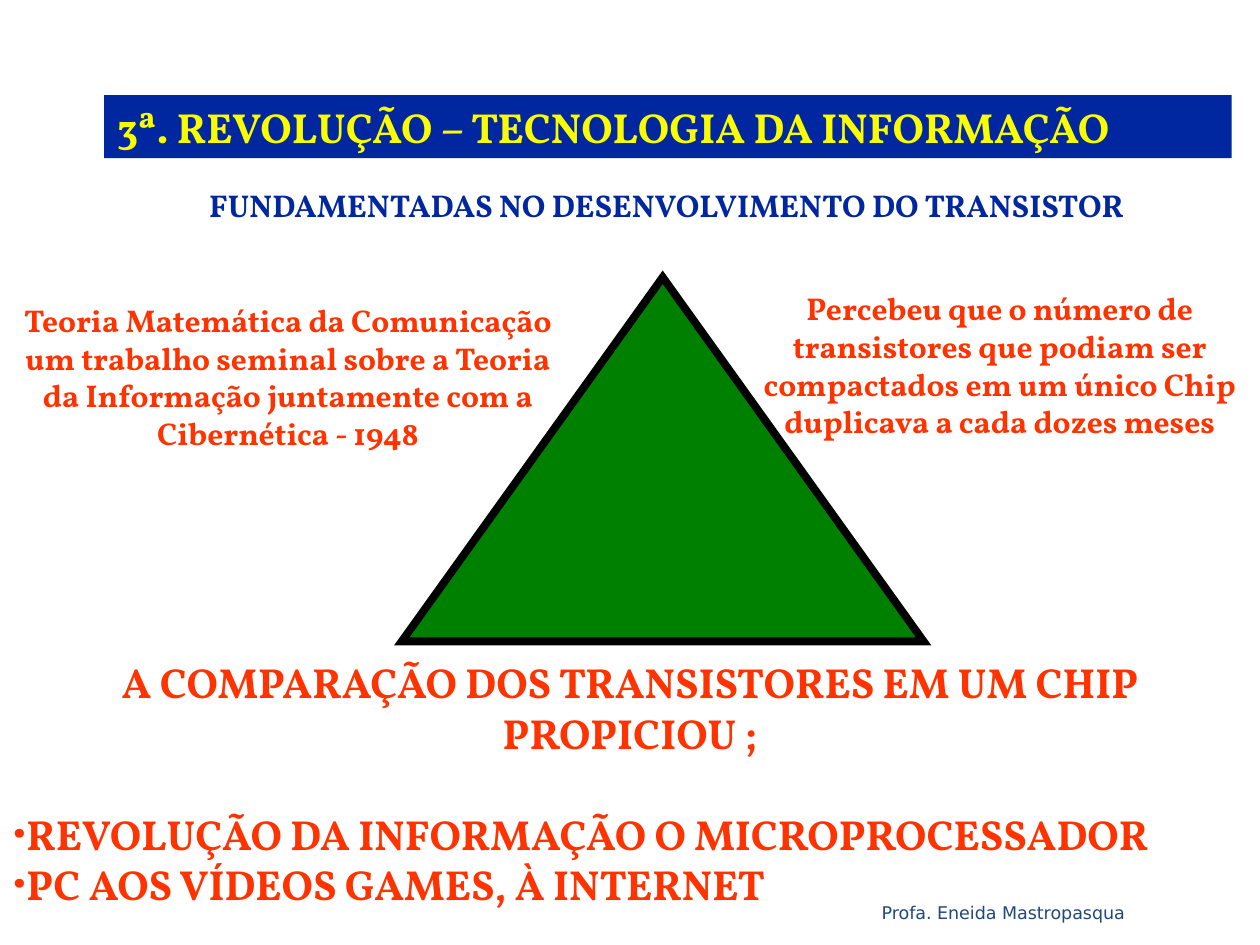
from dataclasses import dataclass

from lxml.etree import SubElement
from pptx import Presentation
from pptx.dml.color import RGBColor
from pptx.enum.shapes import MSO_SHAPE
from pptx.enum.text import MSO_ANCHOR, MSO_AUTO_SIZE, PP_ALIGN
from pptx.oxml.ns import qn
from pptx.util import Cm, Pt

COLORS = {
    "blue": "00279F",
    "yellow": "FAFD00",
    "red": "FF3300",
    "green": "008000",
    "black": "000000",
    "navy": "1F497D",
}


@dataclass
class Box:
    """Position and size in centimetres."""
    left: float
    top: float
    width: float
    height: float

    def emu(self) -> tuple:
        return Cm(self.left), Cm(self.top), Cm(self.width), Cm(self.height)


@dataclass
class Para:
    text: str
    bullet: bool = False
    before: float = 0


@dataclass
class TextBlock:
    box: Box
    paras: list
    size: int = 18
    color: str = "red"
    font: str = "Vollkorn"
    bold: bool = True
    wrap: bool = True
    spacing: float = 1.0


BLOCKS = [
    # Subtitle
    TextBlock(Box(2.9, 3.63, 21.08, 1.02),
              [Para("FUNDAMENTADAS NO DESENVOLVIMENTO DO TRANSISTOR")],
              color="blue", wrap=False),
    # Left and right of the triangle
    TextBlock(Box(0, 5.94, 11.61, 3.3),
              [Para("Teoria Matemática da Comunicação um trabalho seminal sobre a "
                    "Teoria da Informação juntamente com a Cibernética - 1948")]),
    TextBlock(Box(14.91, 5.7, 10.49, 3.3),
              [Para("Percebeu que o número de transistores que podiam ser "
                    "compactados em um único Chip duplicava a cada dozes meses")]),
    # Conclusion with bullets
    TextBlock(Box(0, 13.13, 25.4, 5.31),
              [Para("A COMPARAÇÃO DOS TRANSISTORES EM UM CHIP PROPICIOU ;"),
               Para("REVOLUÇÃO DA INFORMAÇÃO O MICROPROCESSADOR", True, 29),
               Para("PC AOS VÍDEOS GAMES, À INTERNET", True)],
              size=24),
    # Author
    TextBlock(Box(15.73, 18.12, 8.99, 0.61), [Para("Profa. Eneida Mastropasqua")],
              size=10, color="navy", font="DejaVu Sans", bold=False, spacing=0.85),
]


def rgb(name: str) -> RGBColor:
    return RGBColor.from_string(COLORS[name])


def add_run(p, text: str, *, size: int, color: str,
            font: str = "Vollkorn", bold: bool = True) -> None:
    r = p.add_run()
    r.text = text
    r.font.size = Pt(size)
    r.font.name = font
    r.font.bold = bold
    r.font.color.rgb = rgb(color)


def add_bullet(p, font: str) -> None:
    pPr = p._p.get_or_add_pPr()
    pPr.set("marL", "0")
    pPr.set("indent", "0")
    SubElement(pPr, qn("a:buFont")).set("typeface", font)
    SubElement(pPr, qn("a:buChar")).set("char", "•")


def add_block(s, block: TextBlock) -> None:
    tf = s.shapes.add_textbox(*block.box.emu()).text_frame
    tf.word_wrap = block.wrap
    tf.vertical_anchor = MSO_ANCHOR.MIDDLE
    for i, para in enumerate(block.paras):
        p = tf.add_paragraph() if i else tf.paragraphs[0]
        p.alignment = PP_ALIGN.LEFT if para.bullet else PP_ALIGN.CENTER
        p.line_spacing = block.spacing
        p.space_before = Pt(para.before)
        if para.bullet:
            add_bullet(p, block.font)
        add_run(p, para.text, size=block.size, color=block.color,
                font=block.font, bold=block.bold)


def add_title(s, box: Box, text: str) -> None:
    sp = s.shapes.title
    sp.left, sp.top, sp.width, sp.height = box.emu()
    sp.fill.solid()
    sp.fill.fore_color.rgb = rgb("blue")
    tf = sp.text_frame
    tf.word_wrap = False
    tf.auto_size = MSO_AUTO_SIZE.NONE
    tf.vertical_anchor = MSO_ANCHOR.TOP
    p = tf.paragraphs[0]
    p.alignment = PP_ALIGN.LEFT
    add_run(p, text, size=24, color="yellow")


def add_triangle(s, box: Box) -> None:
    sp = s.shapes.add_shape(MSO_SHAPE.ISOSCELES_TRIANGLE, *box.emu())
    sp.shadow.inherit = False
    sp.fill.solid()
    sp.fill.fore_color.rgb = rgb("green")
    sp.line.color.rgb = rgb("black")
    sp.line.width = Pt(4.5)
    # Sharp corners
    ln = sp._element.spPr.find(qn("a:ln"))
    SubElement(ln, qn("a:miter")).set("lim", "800000")


def main() -> None:
    prs = Presentation()
    prs.slide_width, prs.slide_height = Cm(25.4), Cm(19.05)
    s = prs.slides.add_slide(prs.slide_layouts[5])
    add_title(s, Box(2.1, 1.92, 22.73, 1.27),
              "3ª. REVOLUÇÃO – TECNOLOGIA DA INFORMAÇÃO")
    for block in BLOCKS:
        add_block(s, block)
    add_triangle(s, Box(8.1, 5.59, 10.52, 7.34))
    prs.save("out.pptx")


if __name__ == "__main__":
    main()
